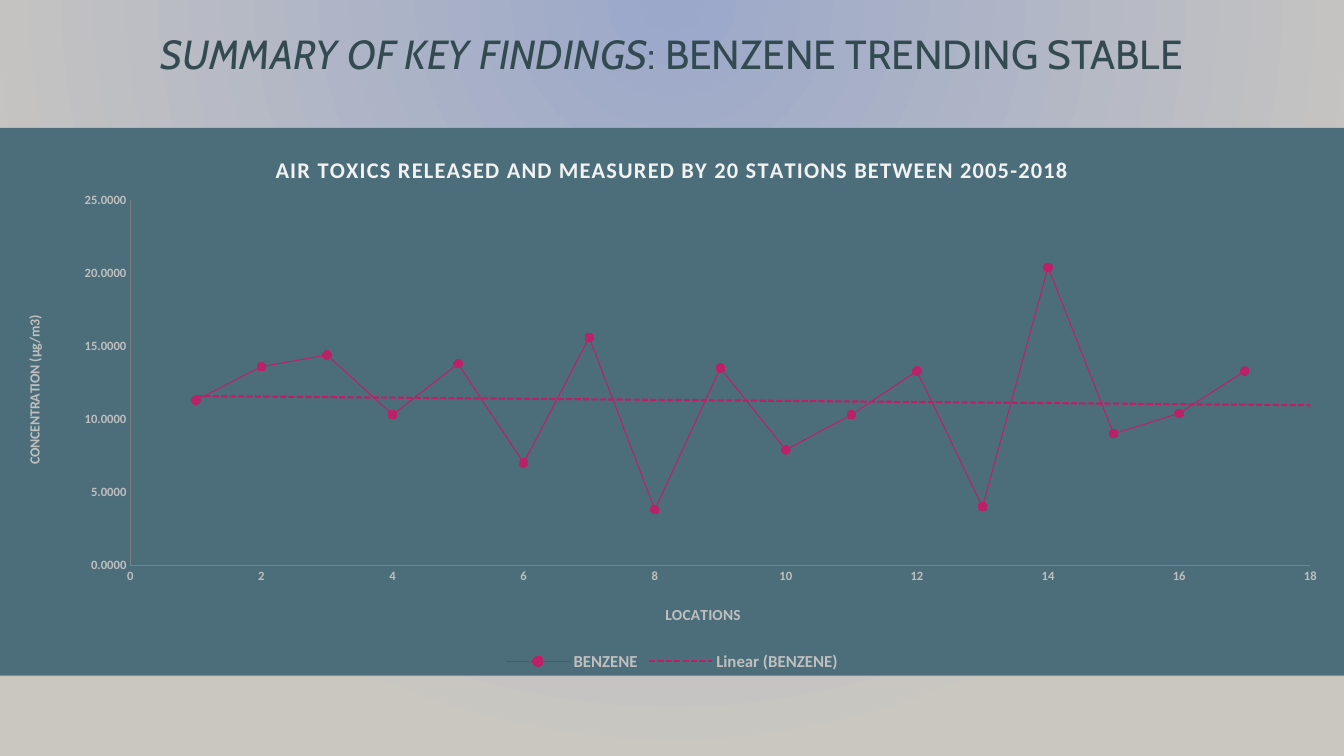
from lxml import etree
from pptx import Presentation
from pptx.chart.data import XyChartData
from pptx.dml.color import RGBColor
from pptx.enum.chart import (XL_CHART_TYPE as ChartType, XL_LEGEND_POSITION as LegendPosition,
                             XL_MARKER_STYLE as MarkerStyle, XL_TICK_MARK as TickMark)
from pptx.enum.shapes import MSO_CONNECTOR as Connector
from pptx.enum.text import MSO_ANCHOR as Anchor, PP_ALIGN as Align
from pptx.oxml import parse_xml
from pptx.oxml.ns import nsdecls, qn
from pptx.util import Pt

# Content
HEADING = [("SUMMARY OF KEY FINDINGS", True), (": BENZENE TRENDING STABLE", False)]
CHART_TITLE = "AIR TOXICS RELEASED AND MEASURED BY 20 STATIONS BETWEEN 2005-2018"
X_TITLE = "LOCATIONS"
Y_TITLE = "CONCENTRATION (µg/m3)"
SERIES_NAME = "BENZENE"
BENZENE = [11.3, 13.6, 14.4, 10.3, 13.8, 7, 15.6, 3.8, 13.5,
           7.9, 10.3, 13.3, 4, 20.4, 9, 10.4, 13.3]

# Style and geometry
SLATE = RGBColor(0x33, 0x4A, 0x51)
TEAL = RGBColor(0x4C, 0x6E, 0x7A)
MAGENTA = RGBColor(0xBA, 0x21, 0x69)
SILVER = RGBColor(0xBF, 0xBF, 0xBF)
GRAY = RGBColor(0x80, 0x80, 0x80)
OFF_WHITE = RGBColor(0xF2, 0xF2, 0xF2)
BLACK = RGBColor(0, 0, 1)
GLOW = RGBColor(0x9B, 0xA8, 0xCA)
STONE = RGBColor(0xCA, 0xC7, 0xC1)
WIDTH, HEIGHT = 960, 540
CHART_TOP, CHART_BOTTOM = 91.4, 482.4


def format_font(font, size, color, face="Calibri", bold=True, italic=False):
    font.size, font.name = Pt(size), face
    font.bold, font.italic = bold, italic
    font.color.rgb = color


def place(element, **fractions):
    """Give a chart part a manual layout, in fractions of the chart."""
    old = element.find(qn("c:layout"))
    if old is not None:
        element.remove(old)
    inner = '<c:layoutTarget val="inner"/>' if "w" in fractions else ""
    modes = "".join(f'<c:{key}Mode val="edge"/>' for key in "xy")
    values = "".join(f'<c:{key} val="{value}"/>' for key, value in fractions.items())
    layout = parse_xml(f'<c:layout {nsdecls("c")}><c:manualLayout>{inner}{modes}{values}'
                       '</c:manualLayout></c:layout>')
    text = element.find(qn("c:tx"))
    element.insert(0 if text is None else element.index(text) + 1, layout)


def add_title(owner, text, size, color, x, y):
    title = owner.chart_title if hasattr(owner, "chart_title") else owner.axis_title
    title.text_frame.text = text
    span = title.text_frame.paragraphs[0].runs[0]
    format_font(span.font, size, color)
    place(title._element, x=x, y=y)
    return span


def format_axis(axis, top, step, number_format):
    axis.minimum_scale, axis.maximum_scale, axis.major_unit = 0, top, step
    axis.has_major_gridlines = False
    axis.major_tick_mark = axis.minor_tick_mark = TickMark.NONE
    axis.tick_labels.number_format = number_format
    axis.tick_labels.number_format_is_linked = False
    format_font(axis.tick_labels.font, 9, SILVER)
    axis.format.line.color.rgb = GRAY
    axis.format.line.width = Pt(0.75)


deck = Presentation()
deck.slide_width, deck.slide_height = Pt(WIDTH), Pt(HEIGHT)
page = deck.slides.add_slide(deck.slide_layouts[5])

# Background glow
page._element.cSld.insert(0, parse_xml(
    f'<p:bg {nsdecls("p", "a")}><p:bgPr><a:gradFill rotWithShape="1"><a:gsLst>'
    f'<a:gs pos="0"><a:srgbClr val="{GLOW}"/></a:gs>'
    f'<a:gs pos="100000"><a:srgbClr val="{STONE}"/></a:gs></a:gsLst>'
    '<a:path path="circle"><a:fillToRect l="43000" t="0" r="43000" b="100000"/></a:path>'
    '</a:gradFill><a:effectLst/></p:bgPr></p:bg>'))

# Faint rule under the chart
rule = page.shapes.add_connector(Connector.STRAIGHT, 0, Pt(CHART_BOTTOM),
                                 Pt(WIDTH), Pt(CHART_BOTTOM))
rule.line.color.rgb = BLACK
rule.line.width = Pt(1)
rule_color = rule._element.spPr.find(".//" + qn("a:srgbClr"))
etree.SubElement(rule_color, qn("a:alpha")).set("val", "20000")
etree.SubElement(rule._element.spPr, qn("a:effectLst"))

# Heading
heading = page.shapes.title
heading.left, heading.top, heading.width, heading.height = 0, Pt(8.6), Pt(WIDTH), Pt(63.4)
heading.text_frame.word_wrap = True
heading.text_frame.vertical_anchor = Anchor.MIDDLE
para = heading.text_frame.paragraphs[0]
para.alignment, para.line_spacing = Align.CENTER, 0.9
for text, italic in HEADING:
    span = para.add_run()
    span.text = text
    format_font(span.font, 29, SLATE, "Cabin", bold=False, italic=italic)

# Chart
data = XyChartData()
points = data.add_series(SERIES_NAME)
for location, value in enumerate(BENZENE, 1):
    points.add_data_point(location, value)
chart = page.shapes.add_chart(ChartType.XY_SCATTER_LINES, 0, Pt(CHART_TOP), Pt(WIDTH),
                              Pt(CHART_BOTTOM - CHART_TOP), data).chart
chart.font.size, chart.font.name = Pt(10), "Calibri"
chart_root = chart._chartSpace
chart_root.find(qn("c:chart")).addnext(parse_xml(
    f'<c:spPr {nsdecls("c", "a")}><a:solidFill><a:srgbClr val="{TEAL}"/></a:solidFill>'
    '<a:ln><a:noFill/></a:ln></c:spPr>'))
place(chart_root.find(".//" + qn("c:plotArea")), x=0.097, y=0.132, w=0.878, h=0.667)

# Axes, titles and legend
format_axis(chart.category_axis, 18, 2, "General")
format_axis(chart.value_axis, 25, 5, "0.0000")
title_span = add_title(chart, CHART_TITLE, 16, OFF_WHITE, 0.202, 0.042)
title_span.font._element.set("spc", "100")
add_title(chart.category_axis, X_TITLE, 11, SILVER, 0.493, 0.864)
add_title(chart.value_axis, Y_TITLE, 10, SILVER, 0.017, 0.338)
chart.has_legend = True
chart.legend.position = LegendPosition.BOTTOM
chart.legend.include_in_layout = False
format_font(chart.legend.font, 12, SILVER)

# Series and trend line
plot = chart.plots[0]
plot.vary_by_categories = False
series = plot.series[0]
series.smooth = False
series.format.line.color.rgb = MAGENTA
series.format.line.width = Pt(0.75)
series.marker.style, series.marker.size = MarkerStyle.CIRCLE, 6
series.marker.format.fill.solid()
series.marker.format.fill.fore_color.rgb = MAGENTA
series.marker.format.line.color.rgb = MAGENTA
series._element.find(qn("c:xVal")).addprevious(parse_xml(
    f'<c:trendline {nsdecls("c", "a")}><c:spPr><a:ln w="{Pt(1.5)}"><a:solidFill>'
    f'<a:srgbClr val="{MAGENTA}"/></a:solidFill><a:prstDash val="sysDash"/></a:ln></c:spPr>'
    '<c:trendlineType val="linear"/><c:forward val="1"/>'
    '<c:dispRSqr val="0"/><c:dispEq val="0"/></c:trendline>'))

deck.save("out.pptx")
